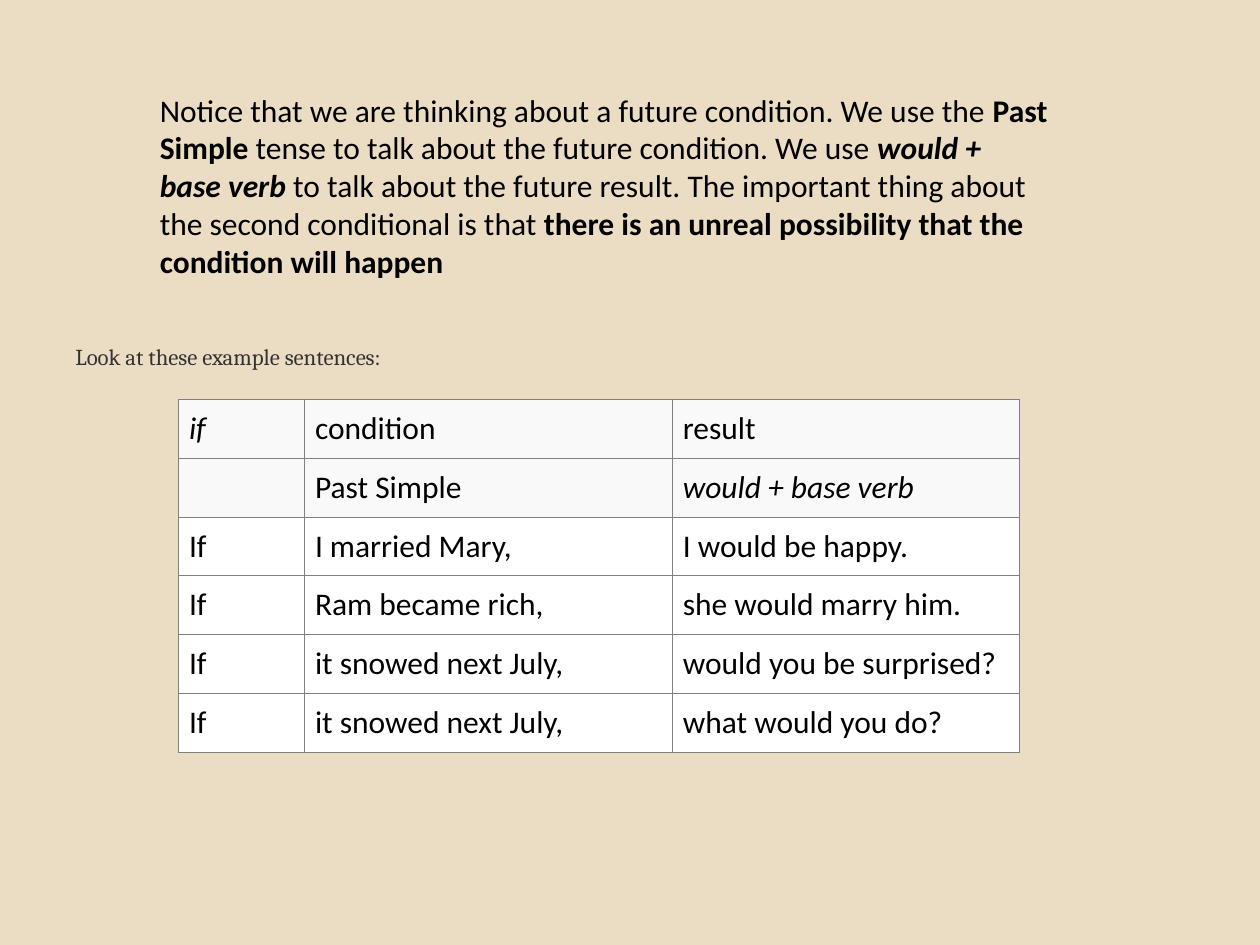
from lxml.etree import SubElement
from pptx import Presentation
from pptx.dml.color import RGBColor
from pptx.enum.text import MSO_ANCHOR, MSO_AUTO_SIZE
from pptx.oxml.ns import qn
from pptx.util import Inches, Pt

SAND = RGBColor(0xEB, 0xDD, 0xC3)
BLACK = RGBColor(0x00, 0x00, 0x00)
CHARCOAL = RGBColor(0x33, 0x33, 0x33)
GRAY = RGBColor(0x80, 0x80, 0x80)
PALE = RGBColor(0xF9, 0xF9, 0xF9)
WHITE = RGBColor(0xFF, 0xFF, 0xFF)


def set_font(paragraph, name, size, color):
    paragraph.font.name = name
    paragraph.font.size = Pt(size)
    paragraph.font.color.rgb = color


def add_borders(cell):
    properties = cell._tc.get_or_add_tcPr()
    for side in ("lnL", "lnR", "lnT", "lnB"):
        line = SubElement(properties, qn(f"a:{side}"), w=str(Pt(0.6)))
        fill = SubElement(line, qn("a:solidFill"))
        SubElement(fill, qn("a:srgbClr"), val=str(GRAY))


prs = Presentation()
prs.slide_width = Inches(10)
prs.slide_height = Inches(7.5)
slide = prs.slides.add_slide(prs.slide_layouts[6])
slide.background.fill.solid()
slide.background.fill.fore_color.rgb = SAND

explanation = slide.shapes.add_textbox(
    Inches(1.17), Inches(0.67), Inches(7.25), Inches(1.62)
).text_frame
explanation.word_wrap = True
explanation.auto_size = MSO_AUTO_SIZE.SHAPE_TO_FIT_TEXT
explanation_line = explanation.paragraphs[0]
set_font(explanation_line, "Calibri", 18, BLACK)
for words, bold, italic in [
    ("Notice that we are thinking about a future condition. We use the ", False, False),
    ("Past Simple", True, False),
    (" tense to talk about the future condition. We use ", False, False),
    ("would + base verb", True, True),
    (" to talk about the future result. The important thing about "
     "the second conditional is that ", False, False),
    ("there is an unreal possibility that the condition will happen", True, False),
]:
    run = explanation_line.add_run()
    run.text = words
    run.font.bold = bold
    run.font.italic = italic

sentences = [
    ("if", "condition", "result"),
    ("", "Past Simple", "would + base verb"),
    ("If", "I married Mary,", "I would be happy."),
    ("If", "Ram became rich,", "she would marry him."),
    ("If", "it snowed next July,", "would you be surprised?"),
    ("If", "it snowed next July,", "what would you do?"),
]
header_rows = 2
italic_words = ("if", "would + base verb")

examples = slide.shapes.add_table(
    len(sentences), 3, Inches(1.42), Inches(3.17), Inches(6.67), Inches(2.8)
).table
for column, width in zip(examples.columns, (1, 2.92, 2.75)):
    column.width = Inches(width)

for row, sentence in enumerate(sentences):
    for col, words in enumerate(sentence):
        cell = examples.cell(row, col)
        cell.margin_left = cell.margin_right = Inches(0.08)
        cell.margin_top = cell.margin_bottom = Inches(0.08)
        add_borders(cell)
        cell.fill.solid()
        cell.fill.fore_color.rgb = PALE if row < header_rows else WHITE
        cell.text = words
        paragraph = cell.text_frame.paragraphs[0]
        set_font(paragraph, "Calibri", 18, BLACK)
        paragraph.font.bold = False
        paragraph.font.italic = words in italic_words

prompt = slide.shapes.add_textbox(
    Inches(0.5), Inches(2.67), Inches(8.92), Inches(0.32)
).text_frame
prompt.word_wrap = True
prompt.auto_size = MSO_AUTO_SIZE.SHAPE_TO_FIT_TEXT
prompt.vertical_anchor = MSO_ANCHOR.MIDDLE
prompt.text = "Look at these example sentences:"
set_font(prompt.paragraphs[0], "Cambria", 13, CHARCOAL)

prs.save("out.pptx")
